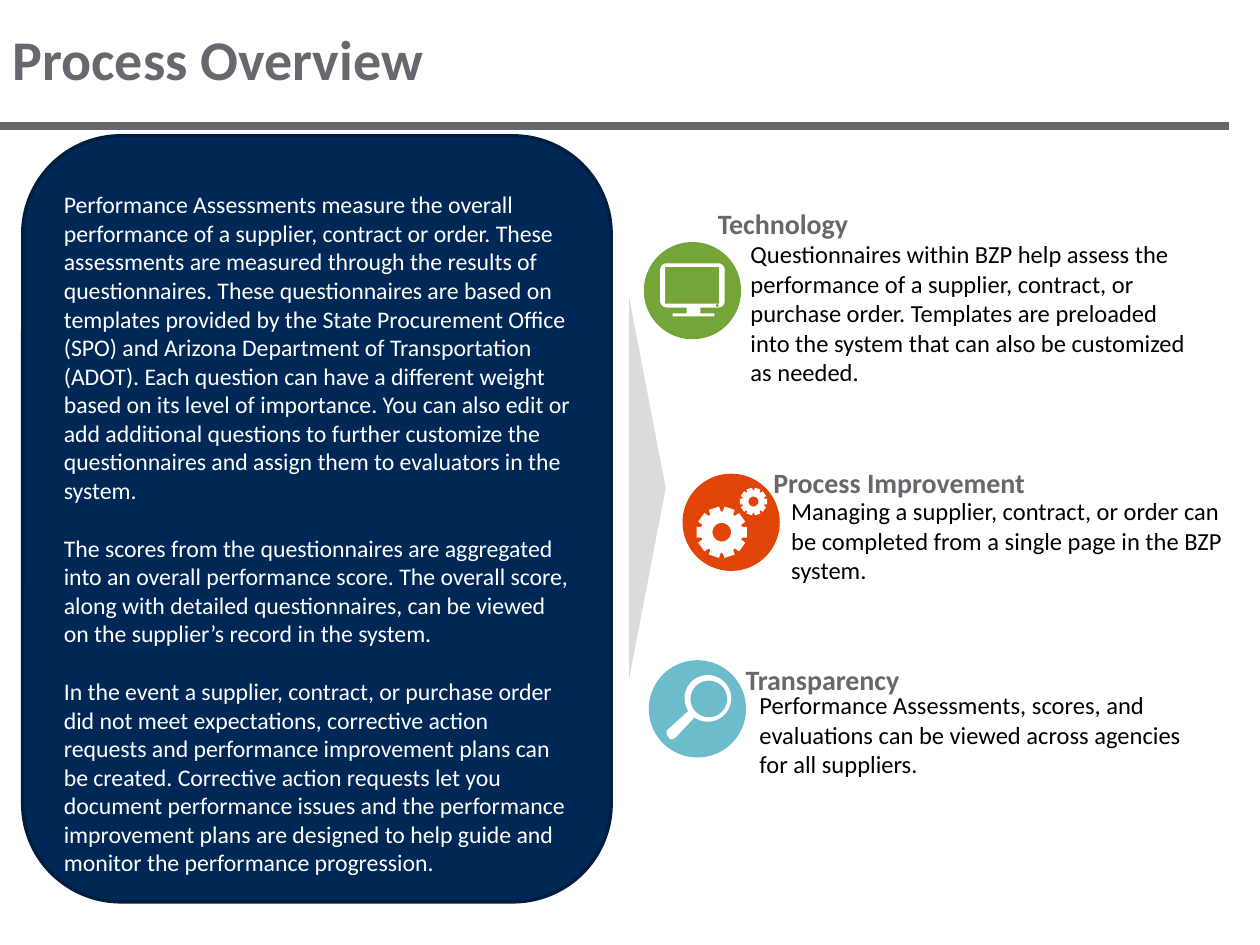
from math import cos, radians, sin

from lxml import etree
from pptx import Presentation
from pptx.dml.color import RGBColor
from pptx.enum.shapes import MSO_CONNECTOR, MSO_SHAPE
from pptx.enum.text import MSO_ANCHOR, MSO_AUTO_SIZE, PP_ALIGN
from pptx.oxml.ns import qn
from pptx.util import Cm, Pt

STRAIGHT = MSO_CONNECTOR.STRAIGHT
OVAL = MSO_SHAPE.OVAL
TRIANGLE = MSO_SHAPE.ISOSCELES_TRIANGLE
ROUNDED = MSO_SHAPE.ROUNDED_RECTANGLE
MIDDLE = MSO_ANCHOR.MIDDLE
GROW = MSO_AUTO_SIZE.SHAPE_TO_FIT_TEXT
LEFT = PP_ALIGN.LEFT

FONT = "Calibri"
COLORS = {
    "gray": "69676D", "light": "DBDBDB", "navy": "002857", "edge": "001E40",
    "green": "75A439", "orange": "E24307", "blue": "6CBCCB",
    "white": "FFFFFF", "black": "000000",
}

deck = Presentation()
deck.slide_width, deck.slide_height = Cm(25.4), Cm(19.05)
page = deck.slides.add_slide(deck.slide_layouts[6])


def paint(shape, color):
    shape.shadow.inherit = False
    shape.fill.solid()
    shape.fill.fore_color.rgb = RGBColor.from_string(COLORS[color])
    shape.line.fill.background()


def arc(x, y, radius, start, end, step=10):
    return [(x + radius * cos(radians(angle)), y + radius * sin(radians(angle)))
            for angle in range(start, end + 1, step)]


rule = page.shapes.add_connector(STRAIGHT, Cm(0), Cm(2.54), Cm(24.77), Cm(2.54))
rule.line.color.rgb = RGBColor.from_string(COLORS["gray"])
rule.line.width = Pt(5)
etree.SubElement(rule._element.spPr, qn("a:effectLst"))

pointer = page.shapes.add_shape(TRIANGLE, Cm(9.19), Cm(9.47), Cm(7.72), Cm(0.74))
pointer.adjustments[0] = 0.5
pointer.rotation = 90
paint(pointer, "light")

panel = page.shapes.add_shape(ROUNDED, Cm(0.46), Cm(2.74), Cm(11.86), Cm(15.44))
paint(panel, "navy")
panel.line.color.rgb = RGBColor.from_string(COLORS["edge"])
panel.line.width = Pt(2)
frame = panel.text_frame
frame.word_wrap = True
frame.vertical_anchor = MIDDLE
frame.margin_top = Cm(0.71)
paragraphs = [
    "Performance Assessments measure the overall performance of a supplier, contract or order. These assessments are measured through the results of questionnaires. These questionnaires are based on templates provided by the State Procurement Office (SPO) and Arizona Department of Transportation (ADOT). Each question can have a different weight based on its level of importance. You can also edit or add additional questions to further customize the questionnaires and assign them to evaluators in the system.",
    "The scores from the questionnaires are aggregated into an overall performance score. The overall score, along with detailed questionnaires, can be viewed on the supplier’s record in the system.",
    "In the event a supplier, contract, or purchase order did not meet expectations, corrective action requests and performance improvement plans can be created. Corrective action requests let you document performance issues and the performance improvement plans are designed to help guide and monitor the performance progression.",
]
for index, text in enumerate(paragraphs):
    para = frame.paragraphs[0] if index == 0 else frame.add_paragraph()
    para.alignment = LEFT
    para.space_before = Pt(16.6 if index else 0)
    span = para.add_run()
    span.text = text
    span.font.name = FONT
    span.font.size = Pt(13.6)
    span.font.color.rgb = RGBColor.from_string(COLORS["white"])

for x, y, diameter, color in [
    (12.98, 4.88, 1.96, "green"),
    (13.76, 9.55, 1.96, "orange"),
    (13.08, 13.31, 1.96, "blue"),
]:
    disc = page.shapes.add_shape(OVAL, Cm(x), Cm(y), Cm(diameter), Cm(diameter))
    paint(disc, color)

monitor = [
    arc(14.48, 5.44, 0.13, 270, 360) + arc(14.48, 6.07, 0.13, 0, 90)
    + [(14.12, 6.2), (14.12, 6.32), (14.4, 6.32), (14.4, 6.38),
       (13.56, 6.38), (13.56, 6.32), (13.84, 6.32), (13.84, 6.2)]
    + arc(13.44, 6.07, 0.13, 90, 180) + arc(13.44, 5.44, 0.13, 180, 270),
    [(13.41, 5.38), (13.41, 6.12), (14.5, 6.12), (14.5, 5.38)],
    arc(14.46, 6.16, 0.03, 0, 350)[::-1],
]
magnifier = [
    arc(14.27, 14.08, 0.47, 147, 485, 2)
    + [(13.61, 14.88), (13.51, 14.91), (13.44, 14.81), (13.44, 14.73)],
]
icons = [monitor, magnifier]
for x, y, radius in [(15.19, 10.11, 0.28), (14.55, 10.73, 0.52)]:
    teeth = []
    for angle in range(0, 360, 36):
        for reach, turn in [(0.81, -15), (1, -12), (1, 12), (0.81, 15)]:
            teeth += arc(x, y, radius * reach, angle + turn, angle + turn)
    icons.append([teeth, arc(x, y, radius * 0.36, 0, 350)[::-1]])

for outlines in icons:
    builder = None
    for outline in outlines:
        points = [(Cm(x), Cm(y)) for x, y in outline]
        if builder is None:
            builder = page.shapes.build_freeform(*points[0], scale=1.0)
        else:
            builder.move_to(*points[0])
        builder.add_line_segments(points[1:], close=True)
    paint(builder.convert_to_shape(), "white")

lens = page.shapes.add_shape(OVAL, Cm(13.92), Cm(13.72), Cm(0.74), Cm(0.74))
paint(lens, "blue")

styles = {
    "title": (32, "gray", True, 1, True),
    "heading": (16, "gray", True, 1.5, False),
    "body": (14, "black", False, 1, True),
}
for style, left, top, width, height, text in [
    ("title", 0, 0, 25.4, 2.34, "Process Overview"),
    ("heading", 14.22, 3.71, 3.18, 1.17, "Technology"),
    ("body", 14.88, 4.7, 9.6, 3.25, "Questionnaires within BZP help assess the performance of a supplier, contract, or purchase order. Templates are preloaded into the system that can also be customized as needed."),
    ("heading", 15.34, 8.92, 5.79, 1.17, "Process Improvement"),
    ("body", 15.7, 9.88, 9.6, 2.06, "Managing a supplier, contract, or order can be completed from a single page in the BZP system."),
    ("heading", 14.78, 12.9, 3.66, 1.17, "Transparency"),
    ("body", 15.06, 13.79, 9.6, 2.06, "Performance Assessments, scores, and evaluations can be viewed across agencies for all suppliers."),
]:
    size, color, bold, spacing, wrap = styles[style]
    box = page.shapes.add_textbox(Cm(left), Cm(top), Cm(width), Cm(height))
    frame = box.text_frame
    frame.word_wrap = wrap
    if style == "title":
        frame.vertical_anchor = MIDDLE
    else:
        frame.auto_size = GROW
    para = frame.paragraphs[0]
    para.line_spacing = spacing
    span = para.add_run()
    span.text = text
    span.font.name = FONT
    span.font.size = Pt(size)
    span.font.bold = bold
    span.font.color.rgb = RGBColor.from_string(COLORS[color])

deck.save("out.pptx")
